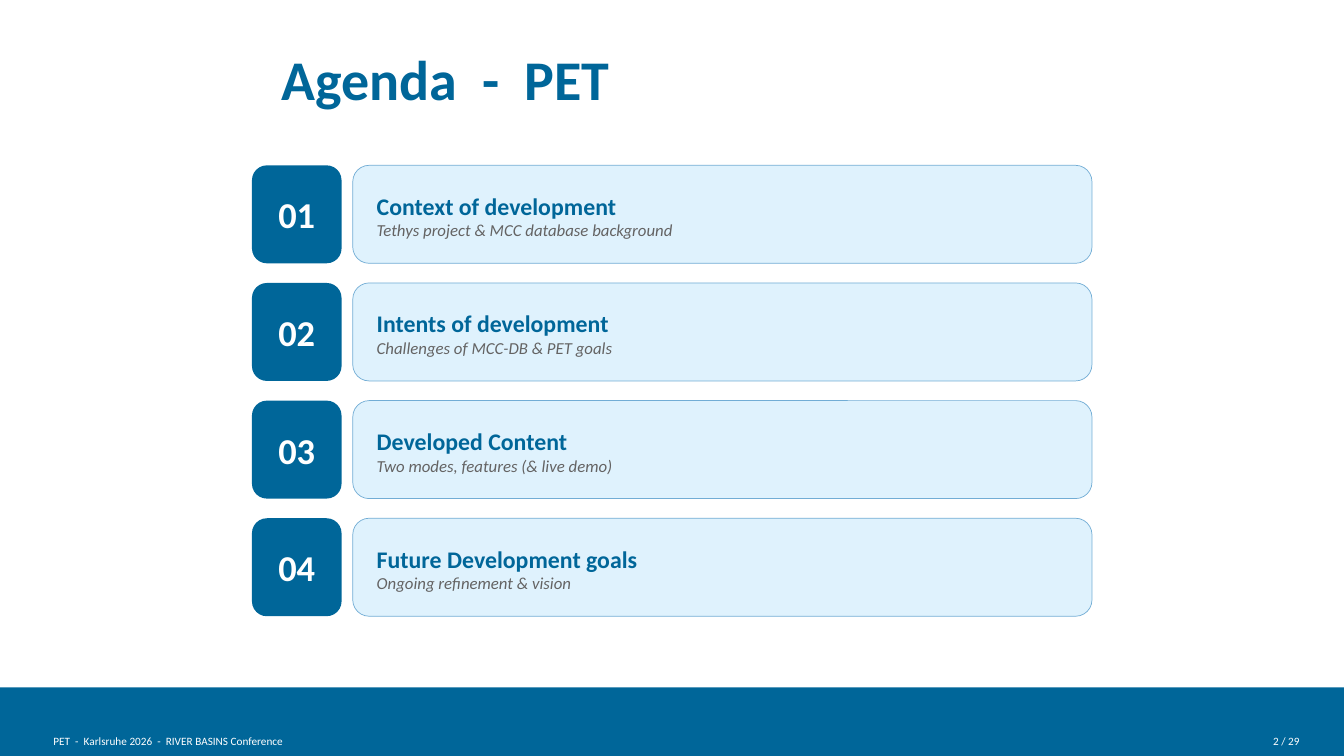
"""Build the agenda slide: four numbered topic cards above a footer band."""
import pptx
import pptx.dml.color
import pptx.enum.shapes
import pptx.enum.text
import pptx.util

COLOURS = {
    "blue": "006699",
    "pale": "DFF2FD",
    "edge": "72ADD5",
    "grey": "646363",
    "white": "FFFFFF",
}
SLIDE_WIDTH = pptx.util.Inches(13.33)
SLIDE_HEIGHT = pptx.util.Inches(7.5)

FORMATS = {
    "title": {"size": 40, "colour": "blue", "bold": True},
    "number": {"size": 26, "colour": "white", "bold": True},
    "topic": {"size": 17, "colour": "blue", "bold": True},
    "detail": {"size": 12, "colour": "grey", "bold": False, "italic": True},
    "footer": {"size": 8, "colour": "white"},
}
TOPICS = [
    ("Context of development", "Tethys project & MCC database background"),
    ("Intents of development", "Challenges of MCC-DB & PET goals"),
    ("Developed Content", "Two modes, features (& live demo)"),
    ("Future Development goals", "Ongoing refinement & vision"),
]
FIRST_ROW, ROW_STEP, ROW_HEIGHT = 21.87, 15.56, 12.96
BADGE_LEFT, BADGE_WIDTH = 18.75, 6.67
CARD_LEFT, CARD_WIDTH = 26.25, 55

ALIGN = pptx.enum.text.PP_ALIGN
ANCHOR = pptx.enum.text.MSO_ANCHOR
SHAPE = pptx.enum.shapes.MSO_SHAPE


def colour(name):
    return pptx.dml.color.RGBColor.from_string(COLOURS[name])


def area(left, top, width, height):
    """Turn percentages of the slide into lengths."""
    return (
        int(SLIDE_WIDTH * left / 100),
        int(SLIDE_HEIGHT * top / 100),
        int(SLIDE_WIDTH * width / 100),
        int(SLIDE_HEIGHT * height / 100),
    )


def write(shape, lines, margins, anchor=ANCHOR.MIDDLE, alignment=ALIGN.LEFT):
    """Fill a shape with (text, format name) lines."""
    frame = shape.text_frame
    frame.word_wrap = True
    frame.vertical_anchor = anchor
    for side, margin in zip(("left", "top", "right", "bottom"), margins):
        setattr(frame, f"margin_{side}", pptx.util.Inches(margin))
    for index, (text, format_name) in enumerate(lines):
        paragraph = frame.add_paragraph() if index else frame.paragraphs[0]
        paragraph.alignment = alignment
        run = paragraph.add_run()
        run.text = text
        values = dict(FORMATS[format_name])
        run.font.name = "Calibri"
        run.font.color.rgb = colour(values.pop("colour"))
        run.font.size = pptx.util.Pt(values.pop("size"))
        for attribute, value in values.items():
            setattr(run.font, attribute, value)


def add_panel(slide, kind, place, fill, edge=None):
    shape = slide.shapes.add_shape(kind, *area(*place))
    shape.shadow.inherit = False
    shape.fill.solid()
    shape.fill.fore_color.rgb = colour(fill)
    if edge:
        shape.line.color.rgb = colour(edge)
        shape.line.width = pptx.util.Pt(0.5)
    else:
        shape.line.fill.background()
    return shape


def add_label(slide, place, text, format_name, **layout):
    box = slide.shapes.add_textbox(*area(*place))
    write(box, [(text, format_name)], (0.03,) * 4, **layout)
    box.text_frame.auto_size = pptx.enum.text.MSO_AUTO_SIZE.SHAPE_TO_FIT_TEXT


def add_topic(slide, index, topic, detail):
    top = FIRST_ROW + index * ROW_STEP
    badge = add_panel(slide, SHAPE.ROUNDED_RECTANGLE,
                      (BADGE_LEFT, top, BADGE_WIDTH, ROW_HEIGHT), "blue")
    write(badge, [(f"{index + 1:02d}", "number")], (0.06, 0.03, 0.06, 0.03),
          alignment=ALIGN.CENTER)
    card = add_panel(slide, SHAPE.ROUNDED_RECTANGLE,
                     (CARD_LEFT, top, CARD_WIDTH, ROW_HEIGHT), "pale", "edge")
    write(card, [(topic, "topic"), (detail, "detail")], (0.19, 0.11, 0.14, 0.08))


def main():
    presentation = pptx.Presentation()
    presentation.slide_width = SLIDE_WIDTH
    presentation.slide_height = SLIDE_HEIGHT
    slide = presentation.slides.add_slide(presentation.slide_layouts[6])

    add_panel(slide, SHAPE.RECTANGLE, (0, 90.93, 100, 9.07), "blue")
    add_label(slide, (20.7, 5.47, 76.13, 9.73), "Agenda  -  PET", "title")
    for index, (topic, detail) in enumerate(TOPICS):
        add_topic(slide, index, topic, detail)
    add_label(slide, (3.75, 96.67, 52.05, 2.53),
              "PET  -  Karlsruhe 2026  -  RIVER BASINS Conference", "footer",
              anchor=ANCHOR.TOP)
    add_label(slide, (88.6, 96.67, 8.33, 2.53), "2 / 29", "footer",
              anchor=ANCHOR.TOP, alignment=ALIGN.RIGHT)

    presentation.save("out.pptx")


if __name__ == "__main__":
    main()
